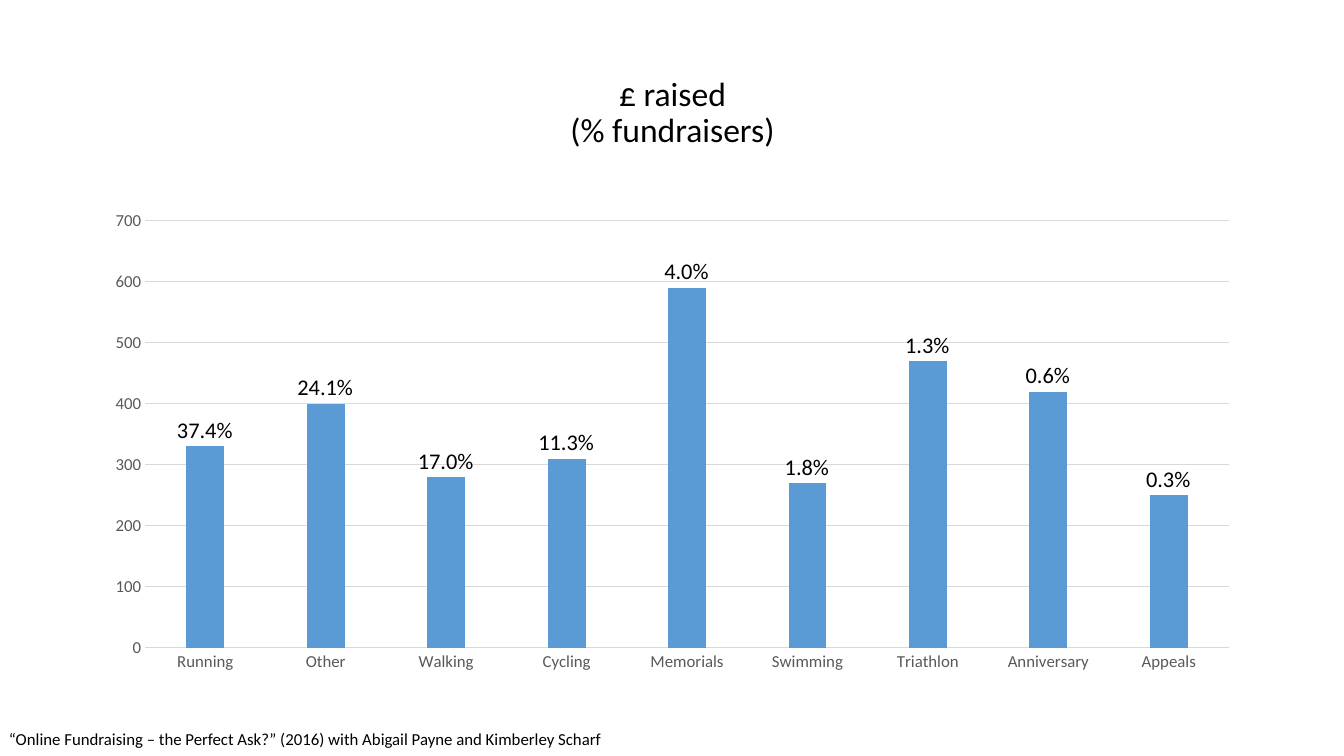
"""Build a slide charting the pounds raised per fundraiser by type of activity."""
import pptx
import pptx.chart.data
import pptx.dml.color
import pptx.enum.chart
import pptx.enum.text
import pptx.oxml
import pptx.oxml.ns
import pptx.util
from dataclasses import dataclass

TITLE = "£ raised\v(% fundraisers)"
SOURCE = "“Online Fundraising – the Perfect Ask?” (2016) with Abigail Payne and Kimberley Scharf"
ACTIVITIES = [
    ("Running", 330, "37.4%"),
    ("Other", 400, "24.1%"),
    ("Walking", 280, "17.0%"),
    ("Cycling", 310, "11.3%"),
    ("Memorials", 590, "4.0%"),
    ("Swimming", 270, "1.8%"),
    ("Triathlon", 470, "1.3%"),
    ("Anniversary", 420, "0.6%"),
    ("Appeals", 250, "0.3%"),
]
AXIS_MAX, AXIS_STEP = 700, 100

WIDTH, HEIGHT = 13.33, 7.5
CHART = (0.92, 2, 11.5, 4.76)
PLOT = (1.44, 2.19, 10.75, 4.24)
LABEL_HEIGHT, LABEL_OVERLAP = 0.37, 0.02


@dataclass(frozen=True)
class Theme:
    font: str = "Calibri"
    ink: str = "000000"
    axis: str = "595959"
    grid: str = "D9D9D9"
    bar: str = "5B9BD5"
    title: int = 24
    label: int = 16
    small: int = 12
    hairline: float = 0.75


THEME = Theme()


def color(value):
    return pptx.dml.color.RGBColor.from_string(value)


def inches(values):
    return [pptx.util.Inches(value) for value in values]


def set_font(font, size, ink):
    font.name = THEME.font
    font.size = pptx.util.Pt(size)
    font.color.rgb = color(ink)


def set_line(line):
    line.color.rgb = color(THEME.grid)
    line.width = pptx.util.Pt(THEME.hairline)


def add_text(page, text, place, size, centered=False, wrap=True):
    box = page.shapes.add_textbox(*inches(place))
    frame = box.text_frame
    frame.word_wrap = wrap
    para = frame.paragraphs[0]
    para.text = text
    set_font(para.font, size, THEME.ink)
    if centered:
        para.alignment = pptx.enum.text.PP_ALIGN.CENTER
    return frame


def pin_plot(chart):
    left, top, width, height = CHART
    shares = {
        "x": (PLOT[0] - left) / width,
        "y": (PLOT[1] - top) / height,
        "w": PLOT[2] / width,
        "h": PLOT[3] / height,
    }
    modes = '<c:layoutTarget val="inner"/><c:xMode val="edge"/><c:yMode val="edge"/>'
    sizes = "".join(f'<c:{name} val="{share:.4f}"/>' for name, share in shares.items())
    layout = pptx.oxml.parse_xml(
        f'<c:layout {pptx.oxml.ns.nsdecls("c")}>'
        f"<c:manualLayout>{modes}{sizes}</c:manualLayout></c:layout>"
    )
    area = chart.plots[0]._element.getparent()
    for old in area.findall(pptx.oxml.ns.qn("c:layout")):
        area.remove(old)
    area.insert(0, layout)


def add_bars(page):
    data = pptx.chart.data.CategoryChartData()
    data.categories = [name for name, _, _ in ACTIVITIES]
    data.add_series("Series 1", [amount for _, amount, _ in ACTIVITIES])
    kind = pptx.enum.chart.XL_CHART_TYPE.COLUMN_CLUSTERED
    chart = page.shapes.add_chart(kind, *inches(CHART), data).chart
    chart.has_title = False
    chart.has_legend = False
    set_font(chart.font, THEME.small, THEME.axis)

    plot = chart.plots[0]
    plot.gap_width, plot.overlap = 219, -27
    plot.vary_by_categories = False
    fill = plot.series[0].format.fill
    fill.solid()
    fill.fore_color.rgb = color(THEME.bar)

    values = chart.value_axis
    values.minimum_scale, values.maximum_scale = 0, AXIS_MAX
    values.major_unit = AXIS_STEP
    set_line(values.major_gridlines.format.line)
    values.format.line.fill.background()
    set_line(chart.category_axis.format.line)
    for axis in (chart.category_axis, values):
        axis.major_tick_mark = pptx.enum.chart.XL_TICK_MARK.NONE
        set_font(axis.tick_labels.font, THEME.small, THEME.axis)
    pin_plot(chart)


def add_shares(page):
    left, top, width, height = PLOT
    column = width / len(ACTIVITIES)
    for index, (_, amount, share) in enumerate(ACTIVITIES):
        label_width = 0.76 if len(share) == 5 else 0.65
        center = left + column * (index + 0.5)
        bar_top = top + height * (1 - amount / AXIS_MAX)
        place = (center - label_width / 2, bar_top - LABEL_HEIGHT + LABEL_OVERLAP,
                 label_width, LABEL_HEIGHT)
        frame = add_text(page, share, place, THEME.label, wrap=False)
        frame.auto_size = pptx.enum.text.MSO_AUTO_SIZE.SHAPE_TO_FIT_TEXT


def main():
    deck = pptx.Presentation()
    deck.slide_width, deck.slide_height = inches((WIDTH, HEIGHT))
    page = deck.slides.add_slide(deck.slide_layouts[6])
    heading = add_text(page, TITLE, (0.92, 0.4, 11.5, 1.45), THEME.title, centered=True)
    heading.vertical_anchor = pptx.enum.text.MSO_ANCHOR.MIDDLE
    heading.paragraphs[0].line_spacing = 0.9
    add_bars(page)
    add_shares(page)
    source = add_text(page, SOURCE, (-0.01, 7.18, 9.22, 0.3), THEME.small)
    source.auto_size = pptx.enum.text.MSO_AUTO_SIZE.SHAPE_TO_FIT_TEXT
    deck.save("out.pptx")


if __name__ == "__main__":
    main()
